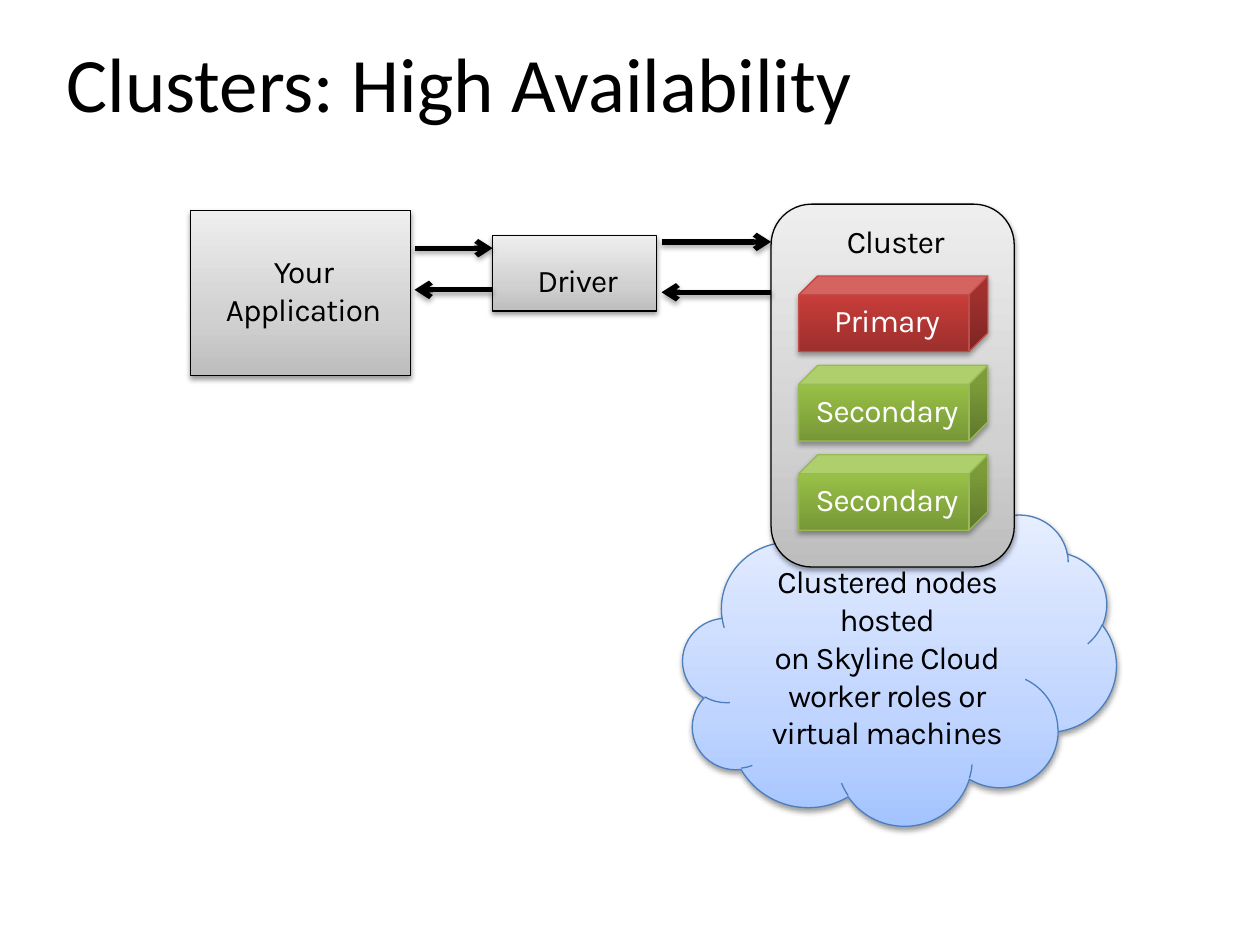
"""Build a slide showing an application, its driver and a highly available cluster."""

from dataclasses import dataclass

from lxml import etree
from pptx import Presentation
from pptx.dml.color import RGBColor
from pptx.enum.shapes import MSO_CONNECTOR, MSO_SHAPE
from pptx.enum.text import MSO_ANCHOR, PP_ALIGN
from pptx.oxml.ns import qn
from pptx.shapes.autoshape import Shape
from pptx.shapes.connector import Connector
from pptx.slide import Slide
from pptx.util import Inches, Pt

CLOUD = MSO_SHAPE.CLOUD
ROUNDED = MSO_SHAPE.ROUNDED_RECTANGLE
RECTANGLE = MSO_SHAPE.RECTANGLE
CUBE = MSO_SHAPE.CUBE
STRAIGHT = MSO_CONNECTOR.STRAIGHT
TOP, MIDDLE, BOTTOM = MSO_ANCHOR.TOP, MSO_ANCHOR.MIDDLE, MSO_ANCHOR.BOTTOM
CENTER = PP_ALIGN.CENTER


@dataclass(frozen=True)
class Shadow:
    opacity: int
    distance: float
    blur: float = 3.1


@dataclass(frozen=True)
class Style:
    stops: tuple[tuple[int, str], ...]
    outline: str
    text: str
    shadow: Shadow


SOFT = Shadow(38, 1.6)
STRONG = Shadow(35, 1.8)


@dataclass(frozen=True)
class Theme:
    body_font: str = "Karla"
    title_font: str = "Calibri"
    body_size: int = 18
    title_size: int = 44
    outline_width: float = 0.75
    arrow_width: float = 3
    ink: str = "000000"
    blue: Style = Style(((0, "A4C4FF"), (35, "BFD4FF"), (100, "E6EEFF")), "4B7EBC", "000000", SOFT)
    gray: Style = Style(((0, "BDBDBD"), (35, "D1D1D1"), (100, "EEEEEE")), "000000", "000000", SOFT)
    red: Style = Style(((0, "9C2F2D"), (80, "CB3E3A"), (100, "CE3B37")), "BF4C48", "FFFFFF", STRONG)
    green: Style = Style(((0, "779737"), (80, "9BC348"), (100, "9DC746")), "98B955", "FFFFFF", STRONG)


THEME = Theme()


@dataclass(frozen=True)
class Node:
    kind: MSO_SHAPE
    lines: tuple[str, ...]
    left: float
    top: float
    width: float
    height: float
    style: Style
    anchor: MSO_ANCHOR = BOTTOM


@dataclass(frozen=True)
class Arrow:
    start: float
    end: float
    height: float


CUBE_TOP, CUBE_STEP = 2.19, 0.71
MEMBERS = (("Primary", THEME.red), ("Secondary", THEME.green), ("Secondary", THEME.green))
CLOUD_LINES = ("Clustered nodes hosted", "on Skyline Cloud", "worker roles or", "virtual machines")

NODES = (
    Node(CLOUD, CLOUD_LINES, 5.42, 4.08, 3.44, 2.47, THEME.blue),
    Node(ROUNDED, ("Cluster",), 6.12, 1.62, 1.93, 2.88, THEME.gray, TOP),
    *(
        Node(CUBE, (name,), 6.34, CUBE_TOP + index * CUBE_STEP, 1.5, 0.6, style)
        for index, (name, style) in enumerate(MEMBERS)
    ),
    Node(RECTANGLE, ("Driver",), 3.91, 1.87, 1.3, 0.6, THEME.gray),
    Node(RECTANGLE, ("Your Application",), 1.51, 1.67, 1.75, 1.31, THEME.gray, MIDDLE),
)

ARROWS = (
    Arrow(3.29, 3.91, 1.97),
    Arrow(3.91, 3.29, 2.3),
    Arrow(5.25, 6.12, 1.92),
    Arrow(6.12, 5.25, 2.32),
)


def add_color(parent: etree._Element, color: str) -> etree._Element:
    """Add an RGB colour element below its parent."""
    return etree.SubElement(parent, qn("a:srgbClr"), val=color)


def add_shadow(shape: Shape | Connector, shadow: Shadow) -> None:
    """Give a shape or connector a shadow falling straight down."""
    effects = etree.SubElement(shape._element.spPr, qn("a:effectLst"))
    outer = etree.SubElement(
        effects,
        qn("a:outerShdw"),
        blurRad=str(Pt(shadow.blur)),
        dist=str(Pt(shadow.distance)),
        dir="5400000",
        rotWithShape="0",
    )
    color = add_color(outer, THEME.ink)
    etree.SubElement(color, qn("a:alpha"), val=str(shadow.opacity * 1000))


def fill_gradient(shape: Shape, stops: tuple[tuple[int, str], ...]) -> None:
    """Fill a shape with colour stops running from bottom to top."""
    shape.fill.gradient()
    shape.fill.gradient_angle = 90
    stop_list = shape._element.spPr.find(f".//{qn('a:gsLst')}")
    for stop in list(stop_list):
        stop_list.remove(stop)
    for position, color in stops:
        stop = etree.SubElement(stop_list, qn("a:gs"), pos=str(position * 1000))
        add_color(stop, color)


def add_node(slide: Slide, node: Node) -> None:
    """Draw one labelled shape."""
    shape = slide.shapes.add_shape(
        node.kind, Inches(node.left), Inches(node.top), Inches(node.width), Inches(node.height)
    )
    fill_gradient(shape, node.style.stops)
    shape.line.color.rgb = RGBColor.from_string(node.style.outline)
    shape.line.width = Pt(THEME.outline_width)
    add_shadow(shape, node.style.shadow)
    frame = shape.text_frame
    frame.word_wrap = True
    frame.vertical_anchor = node.anchor
    frame.margin_left = frame.margin_bottom = Inches(0.1)
    frame.margin_top = frame.margin_right = Inches(0.05)
    paragraph = frame.paragraphs[0]
    paragraph.alignment = CENTER
    for index, line in enumerate(node.lines):
        if index:
            paragraph.add_line_break()
        run = paragraph.add_run()
        run.text = line
        run.font.name = THEME.body_font
        run.font.size = Pt(THEME.body_size)
        run.font.color.rgb = RGBColor.from_string(node.style.text)
        run._r.get_or_add_rPr().set("spc", "-50")


def add_arrow(slide: Slide, arrow: Arrow) -> None:
    """Draw one horizontal arrow."""
    height = Inches(arrow.height)
    connector = slide.shapes.add_connector(
        STRAIGHT, Inches(arrow.start), height, Inches(arrow.end), height
    )
    connector.line.color.rgb = RGBColor.from_string(THEME.ink)
    connector.line.width = Pt(THEME.arrow_width)
    etree.SubElement(connector.line._get_or_add_ln(), qn("a:tailEnd"), type="arrow")
    add_shadow(connector, STRONG)


def add_title(slide: Slide, text: str) -> None:
    """Write the slide title."""
    box = slide.shapes.add_textbox(Inches(0.43), Inches(0.25), Inches(9.15), Inches(0.8))
    frame = box.text_frame
    frame.word_wrap = True
    frame.vertical_anchor = MIDDLE
    run = frame.paragraphs[0].add_run()
    run.text = text
    run.font.name = THEME.title_font
    run.font.size = Pt(THEME.title_size)
    run.font.color.rgb = RGBColor.from_string(THEME.ink)


def main() -> None:
    """Build and save the presentation."""
    presentation = Presentation()
    presentation.slide_width, presentation.slide_height = Inches(10), Inches(7.5)
    slide = presentation.slides.add_slide(presentation.slide_layouts[6])
    for node in NODES:
        add_node(slide, node)
    for arrow in ARROWS:
        add_arrow(slide, arrow)
    add_title(slide, "Clusters: High Availability")
    presentation.save("out.pptx")


if __name__ == "__main__":
    main()
